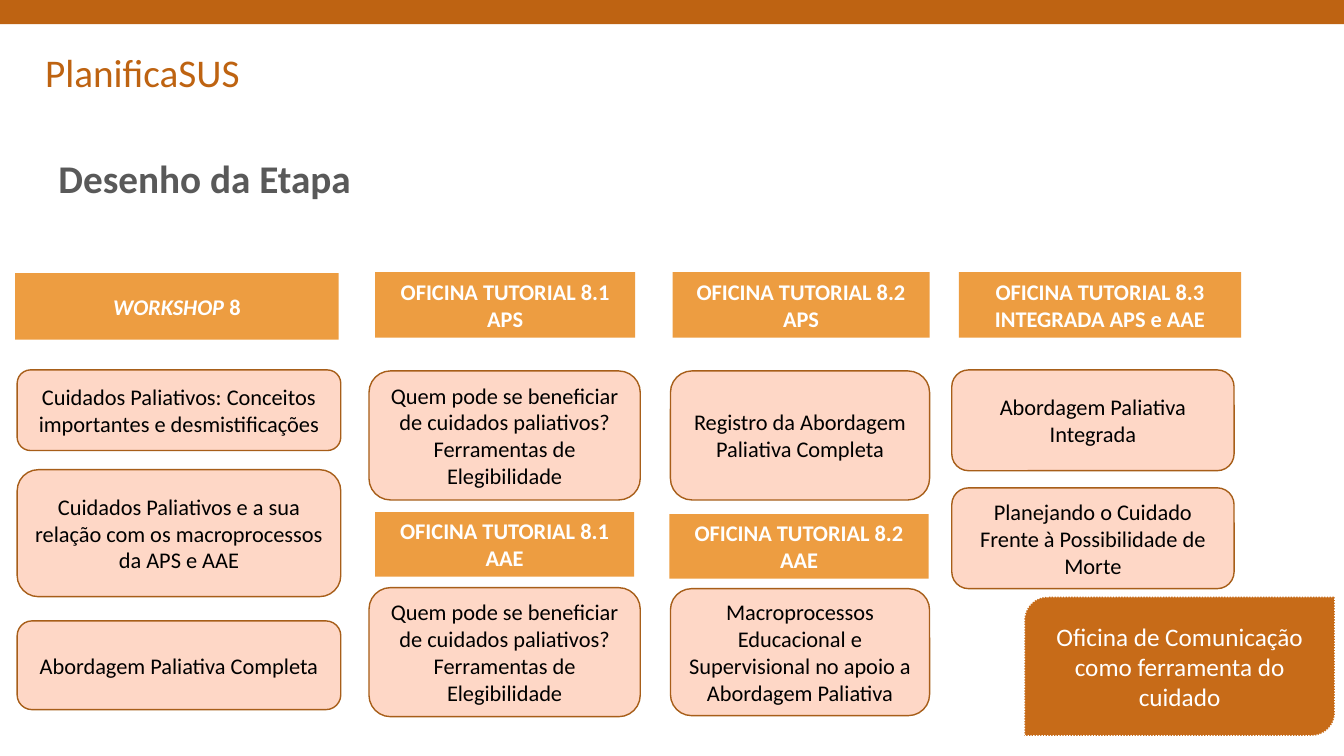
import pptx
import pptx.dml.color
import pptx.enum.dml
import pptx.enum.shapes
import pptx.enum.text
import pptx.util
from dataclasses import dataclass

PX = 9144  # 100 px to the inch
SHAPE = pptx.enum.shapes.MSO_SHAPE
ALIGN = pptx.enum.text.PP_ALIGN
MIDDLE = pptx.enum.text.MSO_ANCHOR.MIDDLE


@dataclass(frozen=True)
class Theme:
    font: str = "Calibri"
    bar: str = "BE6312"
    brand: str = "BE6311"
    title: str = "595959"
    header: str = "ED9D41"
    topic: str = "FED7C6"
    topic_line: str = "A75E19"
    callout: str = "C76B18"
    white: str = "FFFFFF"
    black: str = "000000"
    heading_size: int = 28
    callout_size: int = 18
    body_size: int = 16


THEME = Theme()

# Each header is (left, top, width, height, lines); a line is a list of (text, italic)
HEADERS = [
    (15, 271, 321, 66, [[("WORKSHOP", True), (" 8", False)]]),
    (372, 270, 258, 65, [[("OFICINA TUTORIAL 8.1 APS", False)]]),
    (372, 508, 257, 64, [[("OFICINA TUTORIAL 8.1 AAE", False)]]),
    (667, 270, 255, 65, [[("OFICINA TUTORIAL 8.2", False)], [("APS", False)]]),
    (664, 510, 257, 64, [[("OFICINA TUTORIAL 8.2", False)], [("AAE", False)]]),
    (951, 270, 280, 65, [[("OFICINA TUTORIAL 8.3 INTEGRADA APS e AAE", False)]]),
]

ELIGIBILITY = "Quem pode se beneficiar de cuidados paliativos? Ferramentas de Elegibilidade"

# Each column is (left, width, topics); a topic is (top, height, text)
TOPIC_COLUMNS = [
    (17, 321, [
        (367, 80, "Cuidados Paliativos: Conceitos importantes e desmistificações"),
        (466, 126, "Cuidados Paliativos e a sua relação com os macroprocessos da APS e AAE"),
        (616, 88, "Abordagem Paliativa Completa"),
    ]),
    (366, 269, [(368, 128, ELIGIBILITY), (583, 128, ELIGIBILITY)]),
    (665, 257, [
        (368, 128, "Registro da Abordagem Paliativa Completa"),
        (584, 126, "Macroprocessos Educacional e Supervisional no apoio a Abordagem Paliativa"),
    ]),
    (944, 280, [
        (367, 100, "Abordagem Paliativa Integrada"),
        (484, 100, "Planejando o Cuidado Frente à Possibilidade de Morte"),
    ]),
]


def rgb(value):
    return pptx.dml.color.RGBColor.from_string(value)


def box(left, top, width, height):
    return [length * PX for length in (left, top, width, height)]


def style_font(font, size, color, **extra):
    values = {"name": THEME.font, "size": pptx.util.Pt(size), **extra}
    for attribute, value in values.items():
        setattr(font, attribute, value)
    font.color.rgb = rgb(color)


def write_lines(frame, lines, size, color, align, bold=False):
    for number, line in enumerate(lines):
        paragraph = frame.add_paragraph() if number else frame.paragraphs[0]
        paragraph.alignment = align
        for text, italic in line:
            run = paragraph.add_run()
            run.text = text
            style_font(run.font, size, color, bold=bold, italic=italic)


def add_block(slide, preset, place, fill, outline=None):
    block = slide.shapes.add_shape(preset, *box(*place))
    block.shadow.inherit = False
    block.fill.solid()
    block.fill.fore_color.rgb = rgb(fill)
    if outline:
        block.line.color.rgb = rgb(outline)
        block.line.width = pptx.util.Pt(1)
    else:
        block.line.fill.background()
    block.text_frame.word_wrap = True
    block.text_frame.vertical_anchor = MIDDLE
    return block


def add_header(slide, place, lines):
    header = add_block(slide, SHAPE.RECTANGLE, place, THEME.header)
    write_lines(header.text_frame, lines, THEME.body_size, THEME.white, ALIGN.CENTER, bold=True)


def add_topic(slide, place, text):
    topic = add_block(slide, SHAPE.ROUNDED_RECTANGLE, place, THEME.topic, THEME.topic_line)
    write_lines(topic.text_frame, [[(text, False)]], THEME.body_size, THEME.black, ALIGN.CENTER)


def add_callout(slide, place, text):
    callout = add_block(slide, SHAPE.ROUND_2_DIAG_RECTANGLE, place, THEME.callout, THEME.white)
    callout.line.dash_style = pptx.enum.dml.MSO_LINE.ROUND_DOT
    write_lines(callout.text_frame, [[(text, False)]], THEME.callout_size, THEME.white, ALIGN.CENTER)


def add_program_name(slide, place, text):
    program = slide.shapes.add_textbox(*box(*place))
    program.text_frame.word_wrap = False
    write_lines(program.text_frame, [[(text, False)]], THEME.heading_size, THEME.brand, ALIGN.LEFT)


def set_title(slide, place, text):
    title = slide.shapes.title
    title.left, title.top, title.width, title.height = box(*place)
    title.text_frame.vertical_anchor = MIDDLE
    write_lines(title.text_frame, [[(text, False)]], THEME.heading_size, THEME.title,
                ALIGN.LEFT, bold=True)
    title.text_frame.paragraphs[0].line_spacing = 0.9


def main():
    deck = pptx.Presentation()
    deck.slide_width, deck.slide_height = 1333 * PX, 750 * PX
    slide = deck.slides.add_slide(deck.slide_layouts[5])

    # Top band, program name and title
    add_block(slide, SHAPE.RECTANGLE, (0, 0, 1333, 24), THEME.bar)
    add_program_name(slide, (35, 43, 215, 57), "PlanificaSUS")
    set_title(slide, (48, 107, 1099, 145), "Desenho da Etapa")

    # Workshop headers
    for *place, lines in HEADERS:
        add_header(slide, place, lines)

    # Topics of each workshop
    for left, width, topics in TOPIC_COLUMNS:
        for top, height, text in topics:
            add_topic(slide, (left, top, width, height), text)

    # Communication workshop
    add_callout(slide, (1016, 592, 308, 138),
                "Oficina de Comunicação como ferramenta do cuidado")

    deck.save("out.pptx")


if __name__ == "__main__":
    main()
